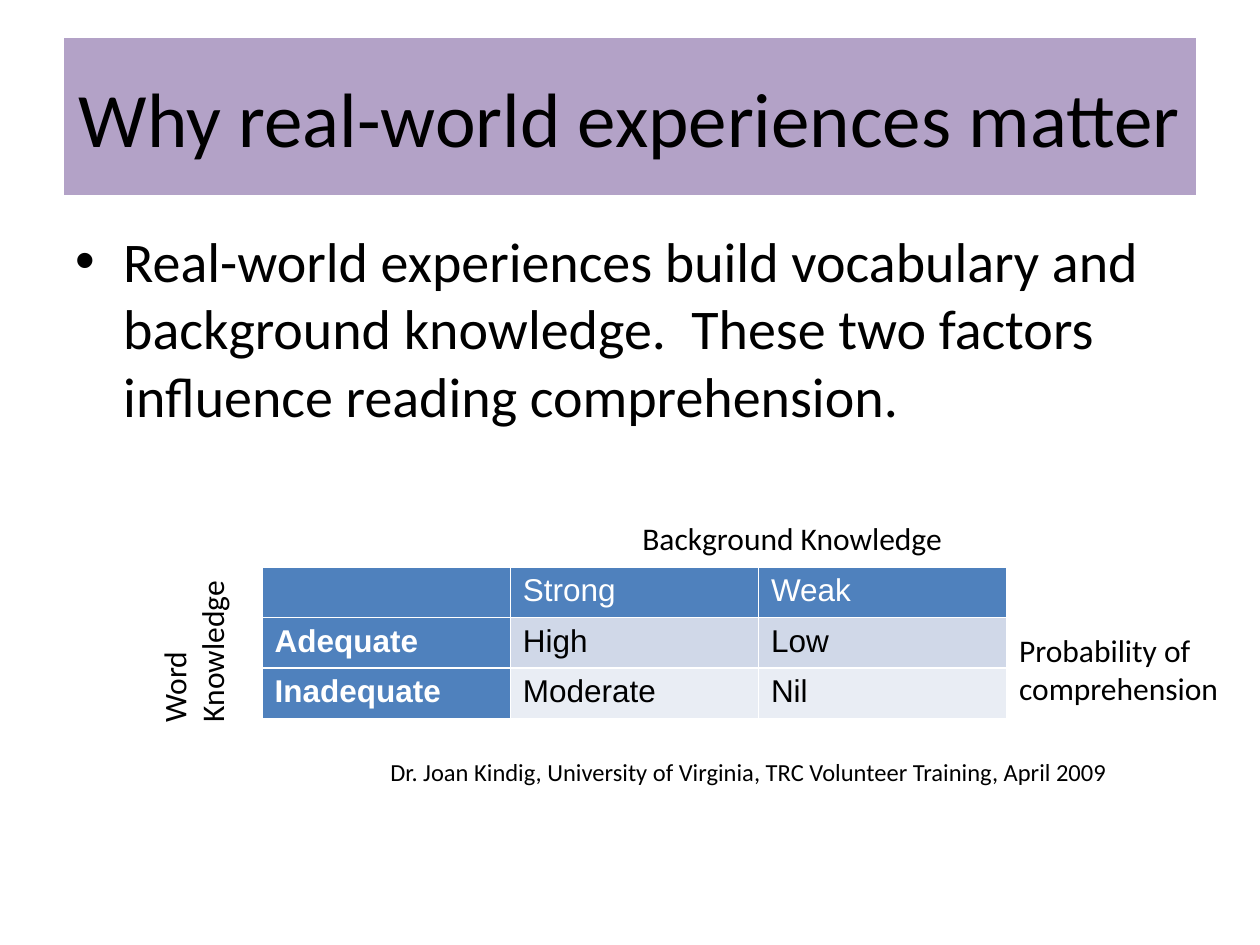
"""Build the slide on why real-world experiences matter for reading comprehension."""
import lxml.etree
import pptx
import pptx.dml.color
import pptx.enum.shapes
import pptx.enum.text
import pptx.oxml.ns
import pptx.util

Inches = pptx.util.Inches
Pt = pptx.util.Pt
qn = pptx.oxml.ns.qn


def color(value):
    return pptx.dml.color.RGBColor.from_string(value)


def write(frame, text, size, font="Calibri", ink="000000", bold=False):
    frame.word_wrap = True
    paragraph = frame.paragraphs[0]
    run = paragraph.add_run()
    run.text = text
    for key, value in {"size": Pt(size), "name": font, "bold": bold}.items():
        setattr(run.font, key, value)
    run.font.color.rgb = color(ink)
    return paragraph


deck = pptx.Presentation()
deck.slide_width, deck.slide_height = Inches(10), Inches(7.5)
slide = deck.slides.add_slide(deck.slide_layouts[6])

heading = slide.shapes.add_shape(
    pptx.enum.shapes.MSO_SHAPE.RECTANGLE, Inches(0.5), Inches(0.3), Inches(9), Inches(1.25)
)
heading.shadow.inherit = False
heading.fill.solid()
heading.fill.fore_color.rgb = color("B3A2C7")
heading.line.color.rgb = color("FFFFFF")
heading.line.width = Pt(0.75)
heading.text_frame.vertical_anchor = pptx.enum.text.MSO_ANCHOR.MIDDLE
heading_line = write(heading.text_frame, "Why real-world experiences matter", 44)
heading_line.alignment = pptx.enum.text.PP_ALIGN.CENTER

texts = {
    "claim": (
        "Real-world experiences build vocabulary and background knowledge.  "
        "These two factors influence reading comprehension.",
        32, 0.5, 1.75, 9, 1.8,
    ),
    "column heading": ("Background Knowledge", 18, 5, 4.07, 2.7, 0.4),
    "credit": (
        "Dr. Joan Kindig, University of Virginia, TRC Volunteer Training, April 2009",
        14, 3, 5.96, 6.5, 0.34,
    ),
    "row heading": ("Word Knowledge", 18, 1.18, 4.08, 0.81, 1.75),
    "outcome": ("Probability of comprehension", 18, 7.99, 4.96, 1.97, 0.71),
}
lines = {}
frames = {}
for part, (text, size, *place) in texts.items():
    frames[part] = slide.shapes.add_textbox(*map(Inches, place)).text_frame
    lines[part] = write(frames[part], text, size)

frames["row heading"]._txBody.bodyPr.set("vert", "vert270")
lines["claim"].space_before = Pt(6.4)
claim_format = lines["claim"]._p.get_or_add_pPr()
for key, value in {"marL": Inches(0.38), "indent": Inches(-0.38)}.items():
    claim_format.set(key, str(value))
lxml.etree.SubElement(claim_format, qn("a:buFont")).set("typeface", "Arial")
lxml.etree.SubElement(claim_format, qn("a:buChar")).set("char", "•")

levels = [
    ["", "Strong", "Weak"],
    ["Adequate", "High", "Low"],
    ["Inadequate", "Moderate", "Nil"],
]
row_fills = ["4F81BD", "D0D8E8", "E9EDF4"]
matrix = slide.shapes.add_table(
    3, 3, Inches(2.08), Inches(4.5), Inches(5.92), Inches(1.15)
).table
for column in matrix.columns:
    column.width = Inches(1.97)
for r, row in enumerate(levels):
    matrix.rows[r].height = Inches(0.38)
    for c, text in enumerate(row):
        cell = matrix.cell(r, c)
        is_heading = r == 0 or c == 0
        if text:
            ink = "FFFFFF" if is_heading else "000000"
            write(cell.text_frame, text, 18, "Arial", ink, bold=c == 0)
        cell_format = cell._tc.get_or_add_tcPr()
        for side in ("lnL", "lnR", "lnT", "lnB"):
            border = lxml.etree.SubElement(cell_format, qn(f"a:{side}"), w=str(Pt(1)))
            paint = lxml.etree.SubElement(border, qn("a:solidFill"))
            lxml.etree.SubElement(paint, qn("a:srgbClr"), val="FFFFFF")
        cell.fill.solid()
        cell.fill.fore_color.rgb = color(row_fills[0] if is_heading else row_fills[r])

deck.save("out.pptx")
